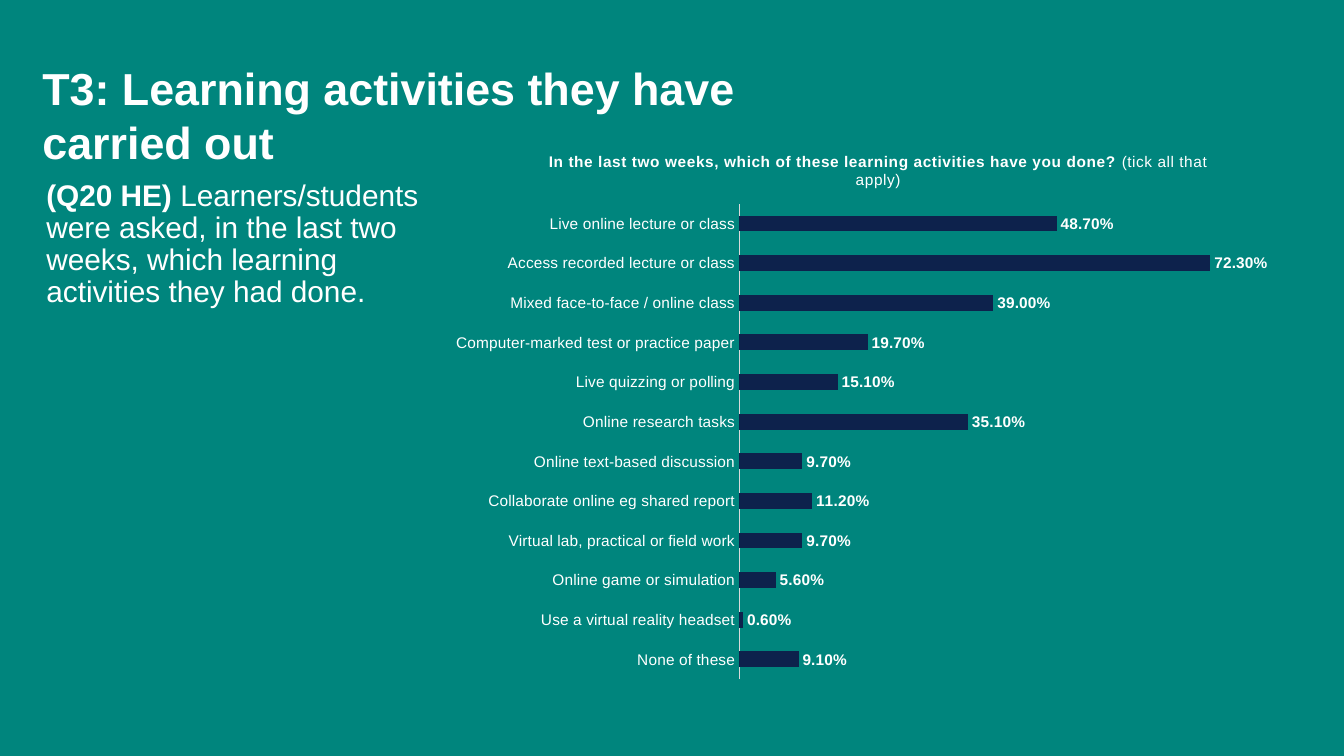
import pptx
import pptx.util
import pptx.dml.color
import pptx.chart.data
import pptx.enum.chart
import pptx.enum.text
import pptx.oxml
import pptx.oxml.ns

Inches, Pt = pptx.util.Inches, pptx.util.Pt
enum = pptx.enum.chart

TEAL, NAVY, WHITE, GREY = "00857D", "0D224C", "FFFFFF", "D9D9D9"
FONT = "Arial"
HEAD = "T3: Learning activities they have carried out"
BODY = [
    ("(Q20 HE) ", True),
    ("Learners/students were asked, in the last two weeks, "
     "which learning activities they had done.", False),
]
ASK = [
    ("In the last two weeks, which of these learning activities have you done? ", True),
    ("(tick all that apply)", False),
]
DATA = [
    ("Live online lecture or class", 0.487),
    ("Access recorded lecture or class", 0.723),
    ("Mixed face-to-face / online class", 0.39),
    ("Computer-marked test or practice paper", 0.197),
    ("Live quizzing or polling", 0.151),
    ("Online research tasks", 0.351),
    ("Online text-based discussion", 0.097),
    ("Collaborate online eg shared report", 0.112),
    ("Virtual lab, practical or field work", 0.097),
    ("Online game or simulation", 0.056),
    ("Use a virtual reality headset", 0.006),
    ("None of these", 0.091),
]


def color(code):
    return pptx.dml.color.RGBColor.from_string(code)


def style(font, size, bold=False):
    font.name, font.size, font.bold = FONT, Pt(size), bold
    font.color.rgb = color(WHITE)


def write(frame, parts, size, line=None, before=None, gap=None):
    para = frame.paragraphs[0]
    if line:
        para.line_spacing = line
    if before is not None:
        para.space_before = Pt(before)
    for text, bold in parts:
        run = para.add_run()
        run.text = text
        style(run.font, size, bold)
        if gap:
            run._r.get_or_add_rPr().set("spc", str(gap))
    return para


def seat(shape, left, top, width, height):
    shape.left, shape.top = Inches(left), Inches(top)
    shape.width, shape.height = Inches(width), Inches(height)
    frame = shape.text_frame
    frame.word_wrap = True
    frame.auto_size = pptx.enum.text.MSO_AUTO_SIZE.NONE
    frame.vertical_anchor = pptx.enum.text.MSO_ANCHOR.TOP
    return frame


def place(node, index, inner=False, **spots):
    old = node.find(pptx.oxml.ns.qn("c:layout"))
    if old is not None:
        node.remove(old)
    target = '<c:layoutTarget val="inner"/>' if inner else ""
    modes = "".join(f'<c:{key}Mode val="edge"/>' for key in "xy")
    sizes = "".join(f'<c:{key} val="{val}"/>' for key, val in spots.items())
    node.insert(index, pptx.oxml.parse_xml(
        f'<c:layout {pptx.oxml.ns.nsdecls("c")}><c:manualLayout>'
        f"{target}{modes}{sizes}</c:manualLayout></c:layout>"))


def add_text(slide):
    head = seat(slide.shapes.title, 0.42, 0.6, 8.03, 0.5)
    head.margin_left = head.margin_right = head.margin_top = head.margin_bottom = 0
    para = write(head, [(HEAD, True)], 32, line=Pt(38.5))
    para.alignment = pptx.enum.text.PP_ALIGN.LEFT

    body = seat(slide.placeholders[1], 0.36, 1.74, 4.29, 2.61)
    para = write(body, BODY, 21.3, line=0.9, before=10)
    props = para._p.get_or_add_pPr()
    props.set("marL", "0")
    props.set("indent", "0")
    props.append(pptx.oxml.parse_xml(f'<a:buNone {pptx.oxml.ns.nsdecls("a")}/>'))


def add_bars(slide):
    data = pptx.chart.data.CategoryChartData(number_format="0.00%")
    data.categories = [name for name, _ in DATA]
    data.add_series("Series 1", [val for _, val in DATA])
    chart = slide.shapes.add_chart(
        enum.XL_CHART_TYPE.BAR_CLUSTERED, Inches(4.33), Inches(1.3),
        Inches(8.34), Inches(5.55), data).chart
    style(chart.font, 10)
    chart.has_legend = False
    chart.has_title = True
    title = chart.chart_title
    write(title.text_frame, ASK, 11, gap=30)
    title.include_in_layout = False
    place(title._element, 1, x=0.13, y=0.03)

    axis = chart.category_axis
    axis.reverse_order = True
    axis.major_tick_mark = axis.minor_tick_mark = enum.XL_TICK_MARK.NONE
    axis.format.line.color.rgb = color(GREY)
    axis.format.line.width = Pt(0.75)
    style(axis.tick_labels.font, 11)
    scale = chart.value_axis
    scale.minimum_scale, scale.maximum_scale = 0, 0.8
    scale.has_major_gridlines = False
    scale.visible = False

    plot = chart.plots[0]
    plot.gap_width = 150
    plot.vary_by_categories = False
    bars = plot.series[0]
    bars.format.fill.solid()
    bars.format.fill.fore_color.rgb = color(NAVY)
    tags = bars.data_labels
    tags.show_value = True
    tags.number_format, tags.number_format_is_linked = "0.00%", False
    tags.position = enum.XL_LABEL_POSITION.OUTSIDE_END
    style(tags.font, 11, True)
    area = chart._chartSpace.chart.plotArea
    place(area, 0, inner=True, x=0.36, y=0.13, w=0.62, h=0.85)


def main():
    deck = pptx.Presentation()
    deck.slide_width, deck.slide_height = Inches(13.33), Inches(7.5)
    slide = deck.slides.add_slide(deck.slide_layouts[1])
    back = slide.background.fill
    back.solid()
    back.fore_color.rgb = color(TEAL)
    add_text(slide)
    add_bars(slide)
    deck.save("out.pptx")


if __name__ == "__main__":
    main()
